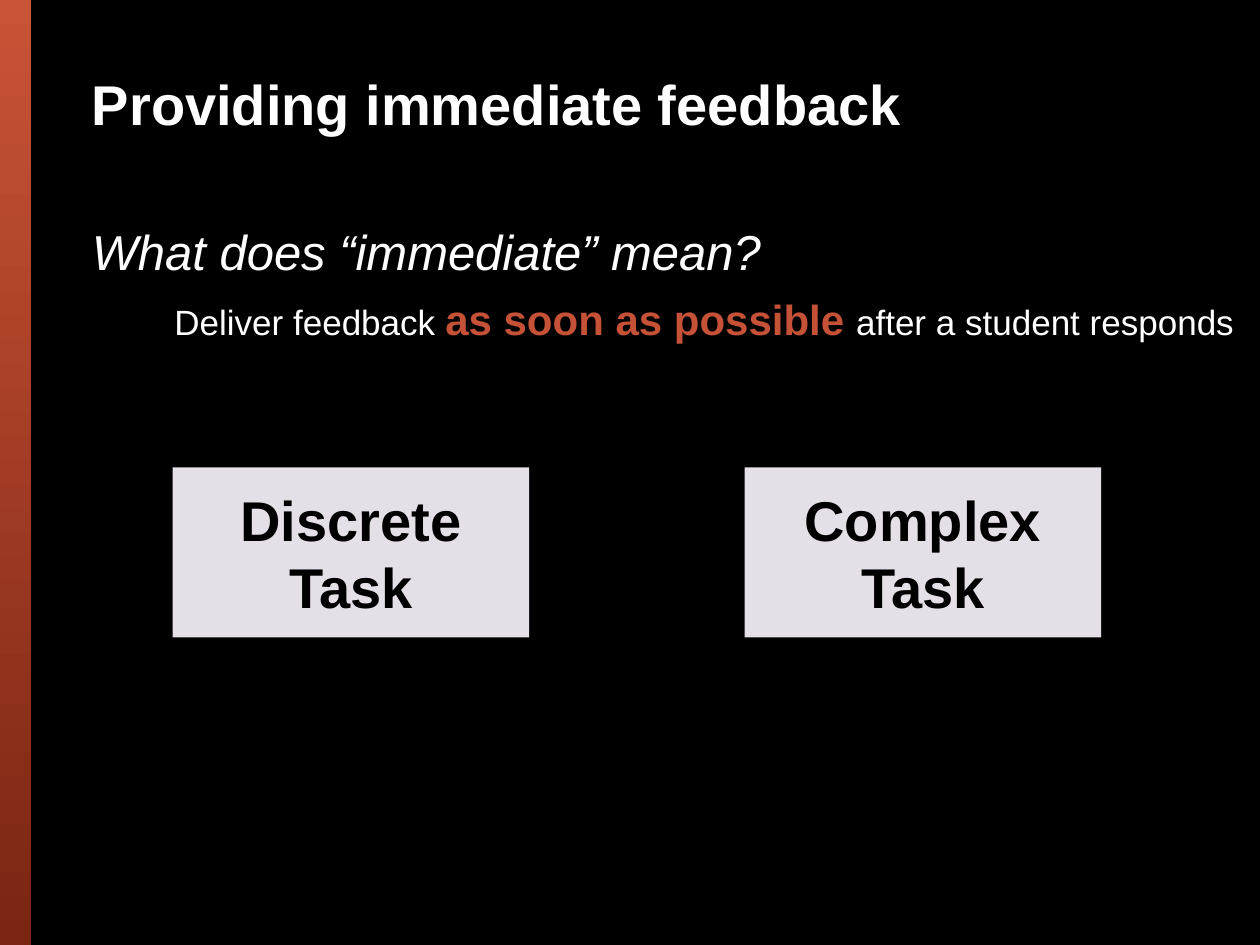
import pptx
import pptx.dml.color
import pptx.enum.shapes
import pptx.enum.text
import pptx.util

Inches = pptx.util.Inches
Align = pptx.enum.text.PP_ALIGN
Anchor = pptx.enum.text.MSO_ANCHOR
WHITE = "FFFFFF"
BLACK = "000000"
ORANGE = "C55136"


def color(value):
    return pptx.dml.color.RGBColor.from_string(value)


def add_span(para, text, size=20, fill=WHITE, bold=False, italic=False):
    span = para.add_run()
    span.text = text
    font = span.font
    font.name = "Arial"
    font.size = pptx.util.Pt(size)
    font.bold = bold
    font.italic = italic
    font.color.rgb = color(fill)


def add_rectangle(page, left, top, width, height):
    box = page.shapes.add_shape(
        pptx.enum.shapes.MSO_SHAPE.RECTANGLE,
        Inches(left), Inches(top), Inches(width), Inches(height))
    box.shadow.inherit = False
    box.line.fill.background()
    return box


def add_side_bar(page):
    bar = add_rectangle(page, 0, 0, 0.25, 7.5)
    bar.fill.gradient()
    bar.fill.gradient_angle = 270
    for stop, value in zip(bar.fill.gradient_stops, ("C85337", "7B2512")):
        stop.color.rgb = color(value)


def set_title(page, text):
    title = page.shapes.title
    title.left, title.top = Inches(0.63), Inches(0.35)
    title.width, title.height = Inches(8.95), Inches(1)
    title.text_frame.vertical_anchor = Anchor.MIDDLE
    para = title.text_frame.paragraphs[0]
    para.alignment = Align.LEFT
    para.line_spacing = 0.9
    add_span(para, text, size=32, bold=True)


def add_text_box(page, left, top, width, height, wrap=True, align=Align.LEFT):
    box = page.shapes.add_textbox(
        Inches(left), Inches(top), Inches(width), Inches(height))
    box.text_frame.word_wrap = wrap
    box.text_frame.auto_size = pptx.enum.text.MSO_AUTO_SIZE.SHAPE_TO_FIT_TEXT
    para = box.text_frame.paragraphs[0]
    para.alignment = align
    return para


def add_task(page, left, text):
    box = add_rectangle(page, left, 3.71, 2.83, 1.35)
    box.fill.solid()
    box.fill.fore_color.rgb = color("E5DFE8")
    box.text_frame.word_wrap = True
    box.text_frame.vertical_anchor = Anchor.MIDDLE
    para = box.text_frame.paragraphs[0]
    para.alignment = Align.CENTER
    add_span(para, text, size=32, fill=BLACK, bold=True)


def main():
    deck = pptx.Presentation()
    deck.slide_width, deck.slide_height = Inches(10), Inches(7.5)
    page = deck.slides.add_slide(deck.slide_layouts[5])
    page.background.fill.solid()
    page.background.fill.fore_color.rgb = color(BLACK)

    add_side_bar(page)
    set_title(page, "Providing immediate feedback")

    question = add_text_box(page, 0.63, 1.71, 5.58, 0.57, wrap=False)
    add_span(question, "What does “immediate” mean?", size=28, italic=True)

    answer = add_text_box(page, 1.18, 2.28, 8.82, 0.5, align=Align.CENTER)
    add_span(answer, "Deliver feedback ")
    add_span(answer, "as soon as possible ", size=24, fill=ORANGE, bold=True)
    add_span(answer, "after a student responds")

    for left, text in ((1.37, "Discrete Task"), (5.91, "Complex Task")):
        add_task(page, left, text)

    deck.save("out.pptx")


if __name__ == "__main__":
    main()
